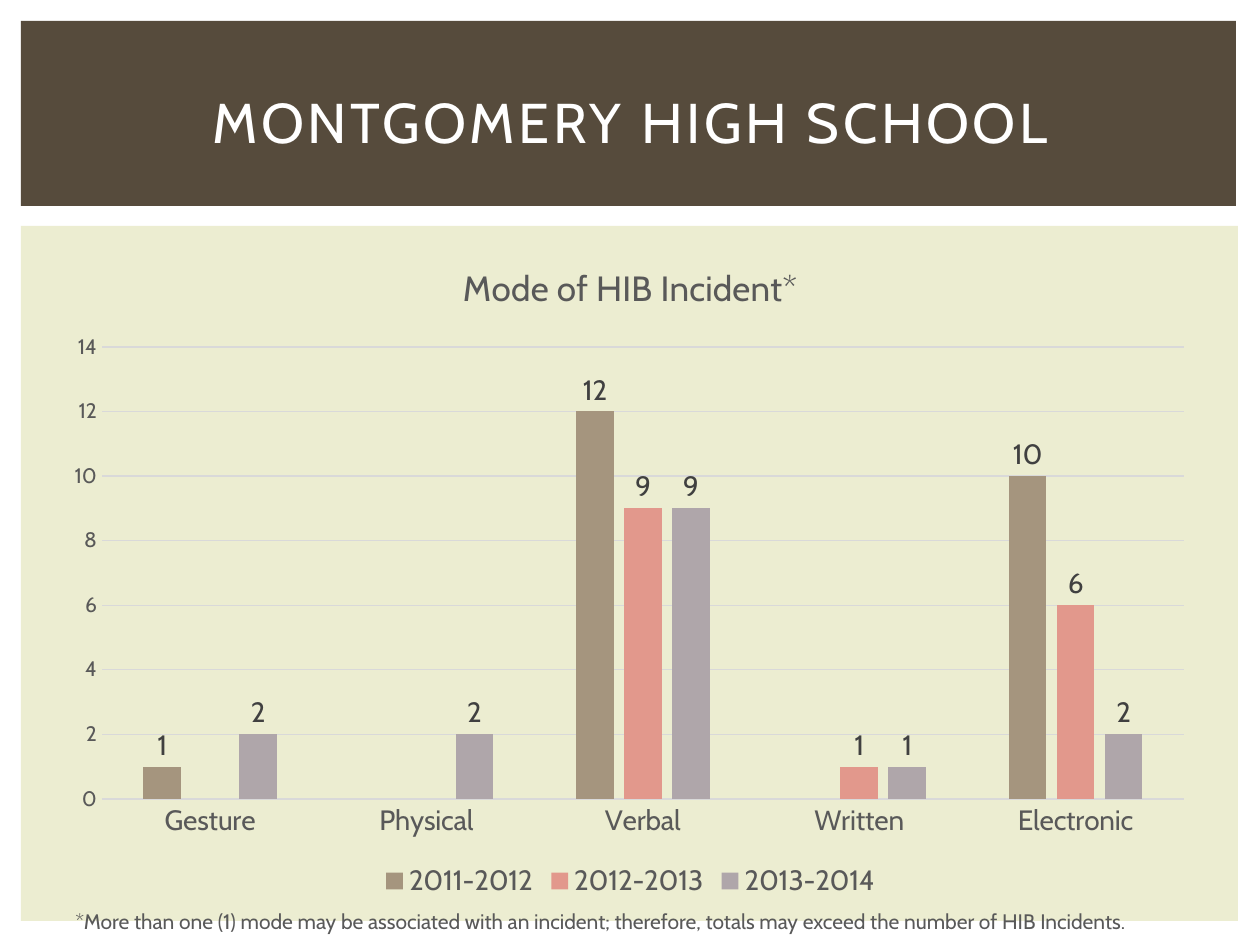
from lxml import etree
from pptx import Presentation
from pptx.chart.data import CategoryChartData
from pptx.dml.color import RGBColor
from pptx.enum.chart import (XL_CHART_TYPE, XL_LABEL_POSITION,
                             XL_LEGEND_POSITION, XL_TICK_MARK)
from pptx.enum.shapes import MSO_SHAPE
from pptx.enum.text import MSO_ANCHOR, PP_ALIGN
from pptx.oxml.ns import qn
from pptx.util import Emu, Pt

TITLE = "MONTGOMERY HIGH SCHOOL"
CHART_TITLE = "Mode of HIB Incident*"
NOTE = ("*More than one (1) mode may be associated with an incident; "
        "therefore, totals may exceed the number of HIB Incidents.")
MODES = ["Gesture", "Physical", "Verbal", "Written", "Electronic"]
YEARS = [
    ("2011-2012", "A5957E", [1, None, 12, None, 10]),
    ("2012-2013", "E2988C", [None, None, 9, 1, 6]),
    ("2013-2014", "AFA6AA", [2, 2, 9, 1, 2]),
]
PANELS = [
    ("ECEDD1", (21, 226, 1217, 695)),
    ("564B3C", (21, 21, 1215, 185)),
]
CHART_BOX = (53, 237, 1155, 666)
PLOT_BOX = (102, 347, 1082, 452)
NOTE_BOX = (63, 902, 1187, 38)
TITLE_BOX = (53, 49, 1155, 145)
FONT, GREY, DARK, RULE = "Cabin", "595959", "404040", "D9D9D9"


def px(n):
    return Emu(round(n * 914400 / 126))


def box(b):
    return [px(n) for n in b]


def rgb(h):
    return RGBColor.from_string(h)


def style(font, size, color=GREY):
    font.name, font.size, font.bold = FONT, Pt(size), False
    font.color.rgb = rgb(color)


def write(tf, text, size, color=GREY, align=PP_ALIGN.LEFT, spacing=0,
          anchor=MSO_ANCHOR.TOP):
    tf.word_wrap = True
    tf.vertical_anchor = anchor
    p = tf.paragraphs[0]
    p.alignment = align
    r = p.add_run()
    r.text = text
    style(r.font, size, color)
    if spacing:
        r.font._element.set("spc", str(spacing * 100))


def rule(line):
    line.color.rgb = rgb(RULE)
    line.width = Pt(0.75)


def place_plot(chart):
    """Fix the inner plot area at PLOT_BOX, as fractions of the chart frame."""
    area = chart._chartSpace.find(".//" + qn("c:plotArea"))
    layout = area.find(qn("c:layout"))
    if layout is None:
        layout = etree.Element(qn("c:layout"))
        area.insert(0, layout)
    manual = etree.SubElement(layout, qn("c:manualLayout"))
    left, top, width, height = CHART_BOX
    x, y, w, h = PLOT_BOX
    for tag, val in [("layoutTarget", "inner"), ("xMode", "edge"), ("yMode", "edge"),
                     ("x", (x - left) / width), ("y", (y - top) / height),
                     ("w", w / width), ("h", h / height)]:
        etree.SubElement(manual, qn("c:" + tag)).set("val", str(val))


def add_mode_chart(s):
    data = CategoryChartData()
    data.categories = MODES
    for name, _, values in YEARS:
        data.add_series(name, values)
    chart = s.shapes.add_chart(XL_CHART_TYPE.COLUMN_CLUSTERED,
                               *box(CHART_BOX), data).chart
    style(chart.font, 10, "000000")
    chart.has_title = True
    r = chart.chart_title.text_frame.paragraphs[0].add_run()
    r.text = CHART_TITLE
    style(r.font, 20)
    chart.chart_title.include_in_layout = False

    chart.has_legend = True
    chart.legend.position = XL_LEGEND_POSITION.BOTTOM
    chart.legend.include_in_layout = False
    style(chart.legend.font, 16)

    cat, val = chart.category_axis, chart.value_axis
    for axis, size in [(cat, 16), (val, 12)]:
        axis.major_tick_mark = axis.minor_tick_mark = XL_TICK_MARK.NONE
        style(axis.tick_labels.font, size)
    rule(cat.format.line)
    val.format.line.fill.background()
    val.has_major_gridlines = True
    rule(val.major_gridlines.format.line)
    val.minimum_scale, val.maximum_scale, val.major_unit = 0, 14, 2

    plot = chart.plots[0]
    plot.gap_width, plot.overlap, plot.vary_by_categories = 219, -27, False
    for series, (_, color, _) in zip(plot.series, YEARS):
        series.format.fill.solid()
        series.format.fill.fore_color.rgb = rgb(color)
        labels = series.data_labels
        labels.show_value = True
        labels.position = XL_LABEL_POSITION.OUTSIDE_END
        style(labels.font, 16, DARK)
    place_plot(chart)


def main():
    prs = Presentation()
    prs.slide_width, prs.slide_height = px(1260), px(945)
    s = prs.slides.add_slide(prs.slide_layouts[5])

    for color, b in PANELS:
        sp = s.shapes.add_shape(MSO_SHAPE.RECTANGLE, *box(b))
        sp.shadow.inherit = False
        sp.fill.solid()
        sp.fill.fore_color.rgb = rgb(color)
        sp.line.fill.background()

    add_mode_chart(s)
    write(s.shapes.add_textbox(*box(NOTE_BOX)).text_frame, NOTE, 12)

    title = s.shapes.title
    title.left, title.top, title.width, title.height = box(TITLE_BOX)
    write(title.text_frame, TITLE, 32, "FFFFFF", PP_ALIGN.CENTER, spacing=2,
          anchor=MSO_ANCHOR.MIDDLE)
    title.element.getparent().append(title.element)  # in front of the panels

    prs.save("out.pptx")


if __name__ == "__main__":
    main()
